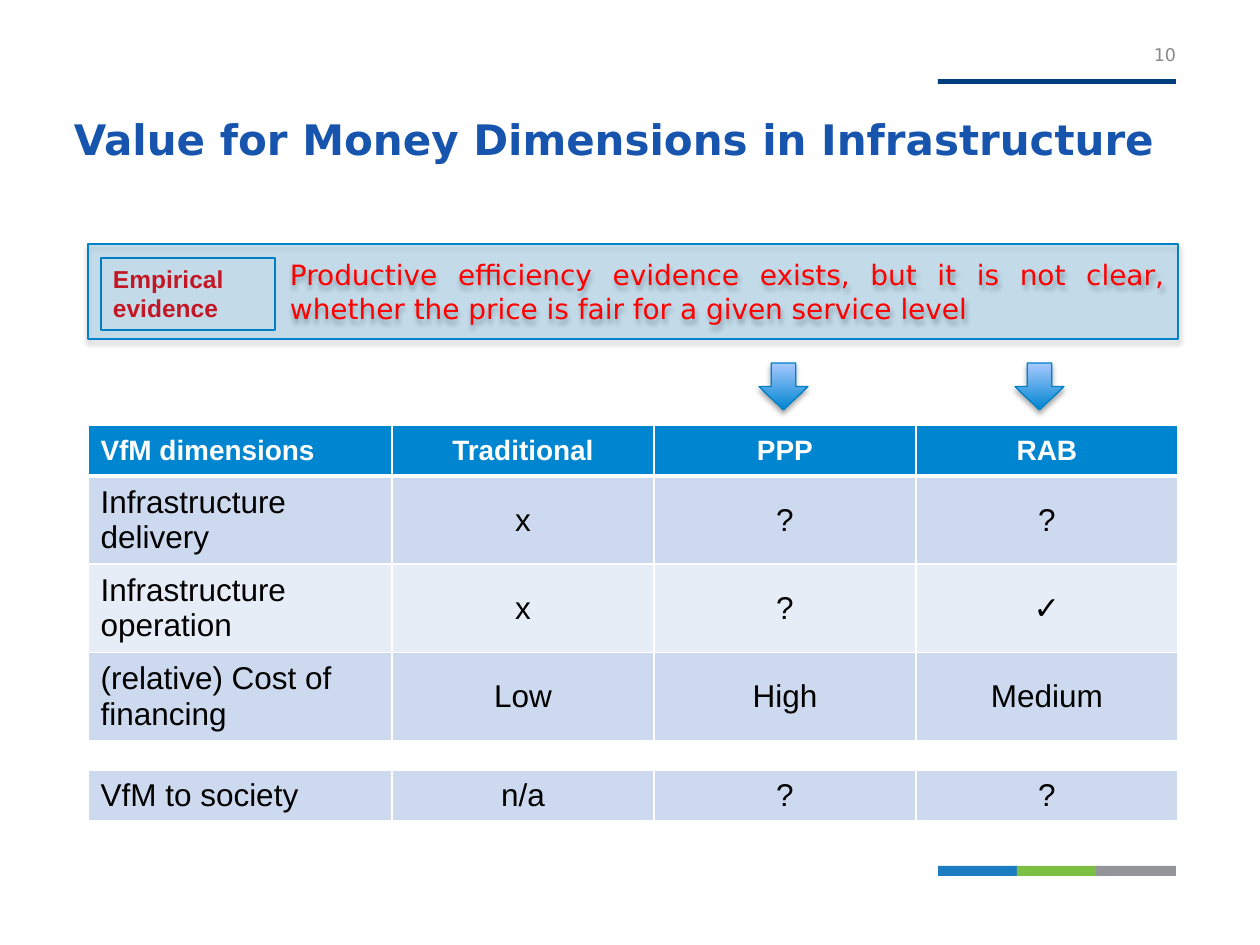
from lxml import etree
from pptx import Presentation
from pptx import util as u
from pptx.dml.color import RGBColor
from pptx.enum import shapes, text
from pptx.oxml.ns import qn

PX = 914400 / 126
ACCENT, EDGE, PALE, RED = "0085D0", "0082CB", "A7C9FF", "FF0000"
BAND_DARK, BAND_LIGHT, WHITE, BLACK = "CCD9EE", "E7EDF7", "FFFFFF", "000000"
LEFT, CENTER, RIGHT, JUSTIFY = (
    text.PP_ALIGN.LEFT, text.PP_ALIGN.CENTER, text.PP_ALIGN.RIGHT, text.PP_ALIGN.JUSTIFY)
TOP, MIDDLE, BOTTOM = text.MSO_ANCHOR.TOP, text.MSO_ANCHOR.MIDDLE, text.MSO_ANCHOR.BOTTOM


def px(*lengths):
    """Turn pixel lengths into EMU."""
    return [u.Emu(round(length * PX)) for length in lengths]


def rgb(code):
    """Return the colour for a hex string."""
    return RGBColor.from_string(code)


def write(frame, words, size=18, color=BLACK, font="Arial", bold=False, align=LEFT):
    """Write one formatted paragraph into a text frame."""
    paragraph = frame.paragraphs[0]
    paragraph.alignment = align
    run = paragraph.add_run()
    run.text = words
    run.font.name, run.font.size, run.font.bold = font, u.Pt(size), bold
    run.font.color.rgb = rgb(color)


class Deck:
    """Hold the style and the current slide."""

    def __init__(self, width, height):
        """Start a presentation with one blank slide."""
        self.show = Presentation()
        self.show.slide_width, self.show.slide_height = px(width, height)
        self.slide = self.show.slides.add_slide(self.show.slide_layouts[6])

    def label(self, box, words, anchor=BOTTOM, insets=(0, 0, 0, 0), **style):
        """Add a text box."""
        frame = self.slide.shapes.add_textbox(*px(*box)).text_frame
        self.arrange(frame, anchor, insets)
        write(frame, words, **style)

    def arrange(self, frame, anchor, insets):
        """Set wrapping, anchor and insets of a text frame."""
        frame.word_wrap, frame.vertical_anchor = True, anchor
        (frame.margin_left, frame.margin_top,
         frame.margin_right, frame.margin_bottom) = px(*insets)

    def panel(self, box, fill=None, alpha=None, line=None, shadow=False,
              kind=shapes.MSO_SHAPE.RECTANGLE):
        """Add a preset shape with a plain, see-through or gradient fill."""
        panel = self.slide.shapes.add_shape(kind, *px(*box))
        panel.shadow.inherit = False
        if fill is None:
            panel.fill.background()
        elif isinstance(fill, tuple):
            panel.fill.gradient()
            panel.fill.gradient_angle = 90
            for stop, code in zip(panel.fill.gradient_stops, fill):
                stop.color.rgb = rgb(code)
        else:
            panel.fill.solid()
            panel.fill.fore_color.rgb = rgb(fill)
        properties = panel.element.spPr
        if alpha:
            tint = properties.find(qn("a:solidFill")).find(qn("a:srgbClr"))
            etree.SubElement(tint, qn("a:alpha"), val=str(alpha * 1000))
        if line:
            panel.line.color.rgb, panel.line.width = rgb(line), u.Pt(0.75)
        else:
            panel.line.fill.background()
        if shadow:
            cast = etree.SubElement(
                properties.find(qn("a:effectLst")), qn("a:outerShdw"),
                blurRad=str(u.Pt(3.1)), dist=str(u.Pt(1.8)), dir="5400000", rotWithShape="0")
            shade = etree.SubElement(cast, qn("a:srgbClr"), val=BLACK)
            etree.SubElement(shade, qn("a:alpha"), val="35000")
        return panel

    def border(self, cell, **widths):
        """Draw white cell borders, one point wide unless given."""
        for side in "LRTB":
            edge = etree.SubElement(cell._tc.get_or_add_tcPr(), qn(f"a:ln{side}"),
                                    w=str(u.Pt(widths.get(side, 1))))
            paint = etree.SubElement(edge, qn("a:solidFill"))
            etree.SubElement(paint, qn("a:srgbClr"), val=WHITE)

    def table(self, box, widths, heights, rows, fills):
        """Add a table; an empty row becomes a merged gap."""
        grid = self.slide.shapes.add_table(len(rows), len(widths), *px(*box)).table
        grid.first_row = grid.horz_banding = False
        for column, width in zip(grid.columns, px(*widths)):
            column.width = width
        for r, (height, words, fill) in enumerate(zip(px(*heights), rows, fills)):
            grid.rows[r].height = height
            for c in range(len(widths)):
                cell = grid.cell(r, c)
                self.border(cell, B=3 if r == 0 else 1, T=3 if r == 1 else 1)
                cell.fill.solid()
                cell.fill.fore_color.rgb = rgb(fill)
                cell.vertical_anchor = MIDDLE
                if words:
                    style = dict(size=16, color=WHITE, bold=True) if r == 0 else {}
                    write(cell.text_frame, words[c], align=CENTER if c else LEFT, **style)
                else:
                    cell.margin_top = cell.margin_bottom = 0
                    etree.SubElement(cell.text_frame.paragraphs[0]._p,
                                     qn("a:endParaRPr"), sz="800")
            if not words:
                grid.cell(r, 0).merge(grid.cell(r, len(widths) - 1))


def main():
    """Build the slide and save it."""
    deck = Deck(1260, 945)
    deck.panel((938, 79, 238, 5), "003E7E")
    for i, stripe in enumerate(("1C7CC2", "7BC042", "939598")):
        deck.panel((938 + 79 * i, 866, 80, 10), stripe)
    deck.label((74, 45, 1094, 129), "Value for Money Dimensions in Infrastructure",
               insets=(0, 0, 0, 10), size=24, color="1754AD", font="DejaVu Sans", bold=True)
    deck.label((1114, 15, 62, 50), "10", size=10, color="898989",
               font="DejaVu Sans", align=RIGHT)

    dimensions = [
        ("VfM dimensions", "Traditional", "PPP", "RAB"),
        ("Infrastructure delivery", "x", "?", "?"),
        ("Infrastructure operation", "x", "?", "✓"),
        ("(relative) Cost of financing", "Low", "High", "Medium"),
        (),
        ("VfM to society", "n/a", "?", "?"),
    ]
    deck.table((88, 425, 1090, 380), (304, 262, 262, 262), (51, 83, 83, 83, 30, 50),
               dimensions, (ACCENT, BAND_DARK, BAND_LIGHT, BAND_DARK, WHITE, BAND_DARK))

    evidence = deck.panel((101, 258, 174, 72), line=ACCENT).text_frame
    deck.arrange(evidence, TOP, (12, 6, 12, 6))
    write(evidence, "Empirical evidence", size=14, color=RED, bold=True, align=JUSTIFY)
    for left in (759, 1015):
        deck.panel((left, 363, 49, 47), (ACCENT, PALE), line=EDGE, shadow=True,
                   kind=shapes.MSO_SHAPE.DOWN_ARROW)
    finding = deck.panel((88, 244, 1090, 95), ACCENT, alpha=18, line=EDGE,
                         shadow=True).text_frame
    deck.arrange(finding, MIDDLE, (202, 6, 13, 6))
    write(finding, "Productive efficiency evidence exists, but it is not clear, "
          "whether the price is fair for a given service level",
          size=16, color=RED, font="DejaVu Sans", align=JUSTIFY)
    deck.show.save("out.pptx")


if __name__ == "__main__":
    main()
